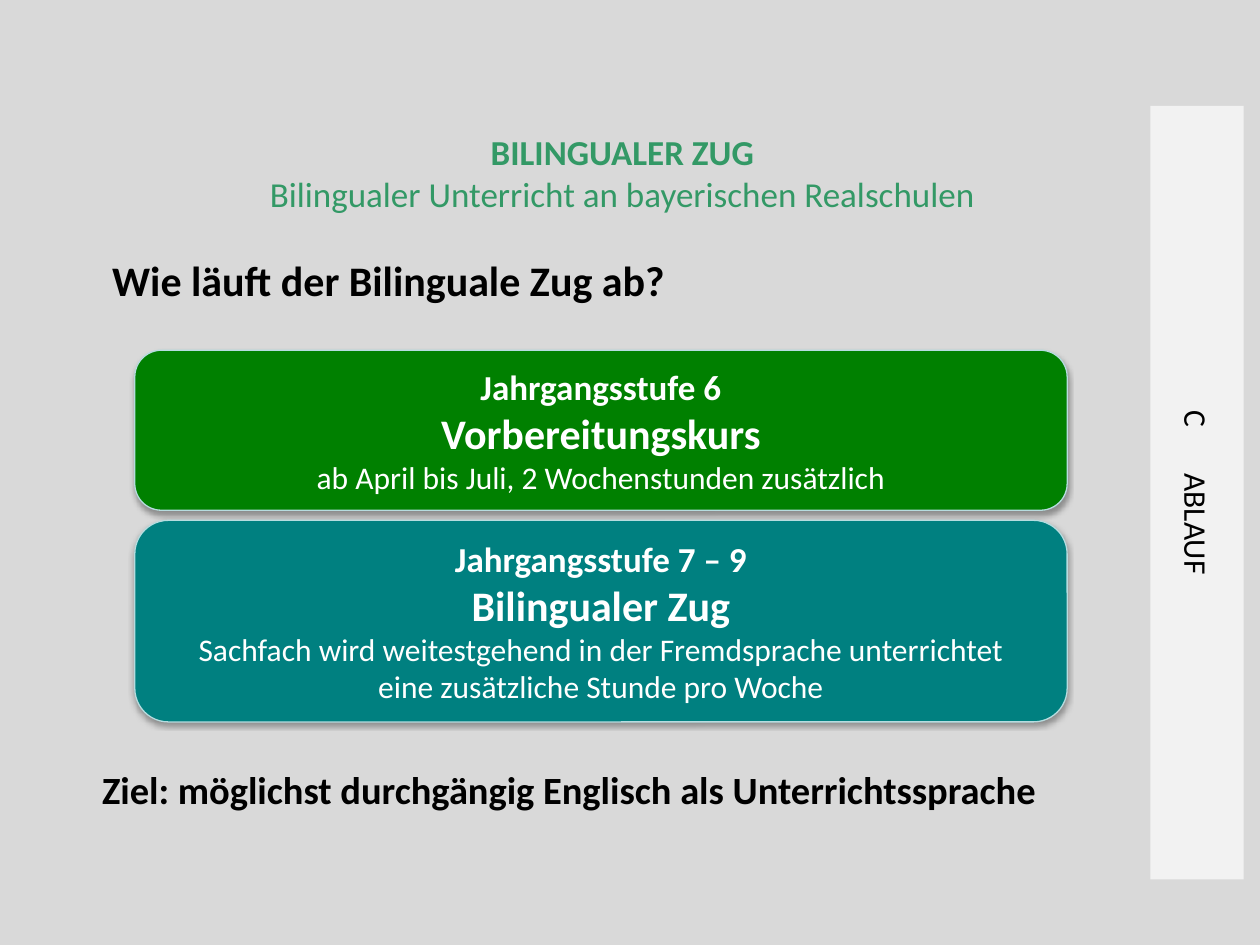
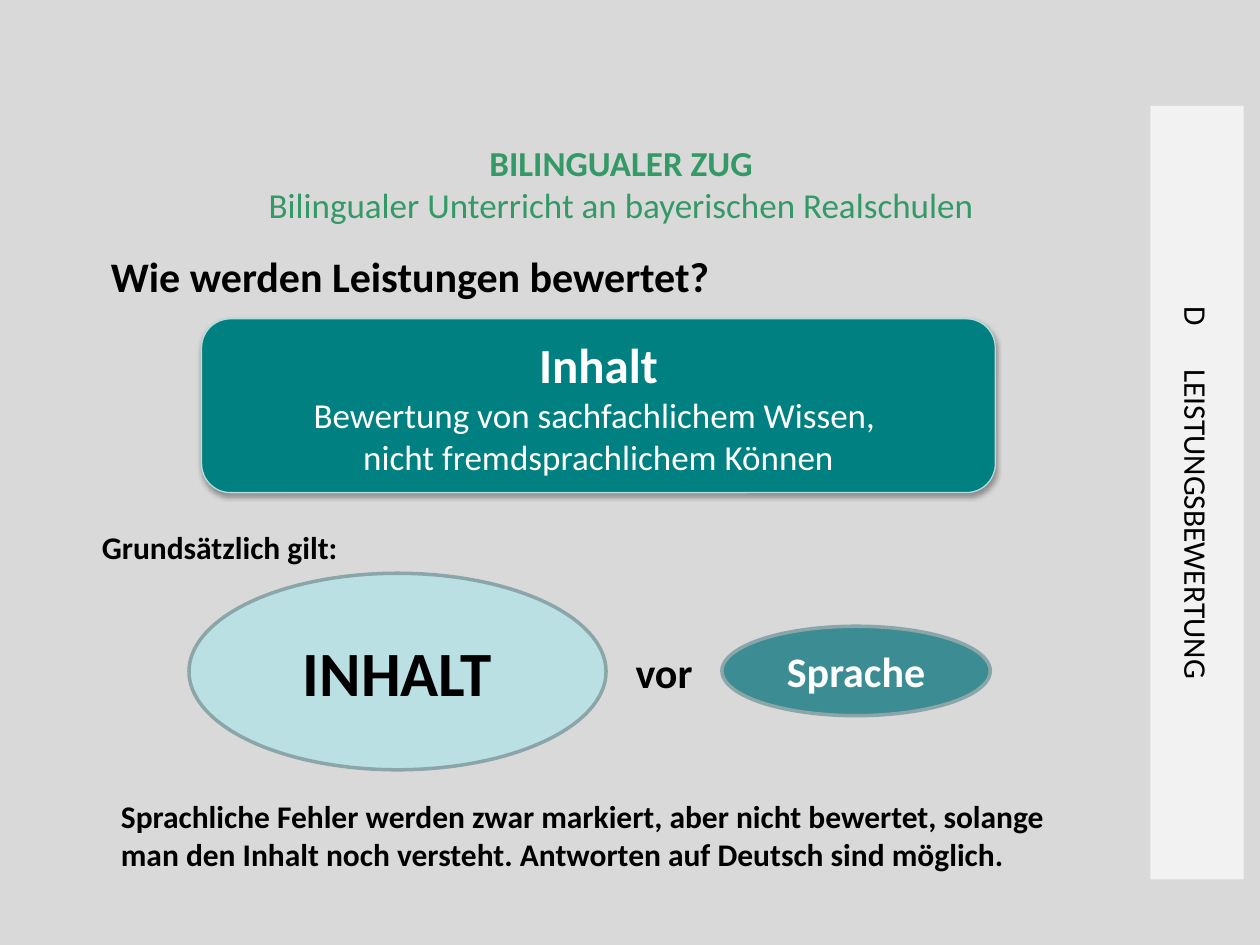
from dataclasses import dataclass

from lxml.etree import SubElement
from pptx import Presentation
from pptx.dml.color import RGBColor
from pptx.enum.shapes import MSO_SHAPE
from pptx.enum.text import MSO_ANCHOR, MSO_AUTO_SIZE, PP_ALIGN
from pptx.oxml.ns import qn
from pptx.util import Emu, Inches, Pt


@dataclass(frozen=True)
class Theme:
    font: str = "Calibri"
    background: str = "D9D9D9"
    tab: str = "F2F2F2"
    header: str = "339966"
    ink: str = "000000"
    light: str = "FFFFFF"
    green: str = "008000"
    teal: str = "008080"
    panel_edge: str = "B6DCDF"
    pale_oval: str = "BBE0E3"
    dark_oval: str = "3C8C93"
    oval_edge: str = "8AA6A8"
    body: int = 18
    lead: int = 20
    goal: int = 22
    title: int = 24
    panel_title: int = 28
    emphasis: int = 36


THEME = Theme()
COLUMNS, ROWS = 100, 75
WIDTH, HEIGHT = Inches(10), Inches(7.5)
TAB_AREA = (91.3, 8.4, 7.4, 61.4)
HEADER_SIZE = (72.8, 7.7)
TITLE_SIZE = (77.2, 5)


def rgb(code):
    return RGBColor.from_string(code)


def on_grid(left, top, width, height):
    """Turn columns and rows into slide lengths."""
    column, row = WIDTH / COLUMNS, HEIGHT / ROWS
    return [Emu(round(count * unit)) for count, unit in
            zip((left, top, width, height), (column, row, column, row))]


def write(frame, *paragraphs, size=THEME.body, color=THEME.ink, bold=False,
          align=PP_ALIGN.LEFT, anchor=MSO_ANCHOR.TOP):
    """Fill a frame; a paragraph is a text or a (text, size, bold) tuple."""
    frame.word_wrap = True
    frame.auto_size = MSO_AUTO_SIZE.NONE
    frame.vertical_anchor = anchor
    frame.margin_left = frame.margin_right = Inches(0.05)
    frame.margin_top = frame.margin_bottom = Inches(0.05)
    for index, content in enumerate(paragraphs):
        text, text_size, text_bold = (
            (content, size, bold) if isinstance(content, str) else content)
        paragraph = frame.add_paragraph() if index else frame.paragraphs[0]
        paragraph.alignment = align
        for number, line in enumerate(text.split("\n")):
            if number:
                paragraph.add_line_break()
            run = paragraph.add_run()
            run.text = line
            run.font.name = THEME.font
            run.font.size = Pt(text_size)
            run.font.bold = text_bold
            run.font.color.rgb = rgb(color)


class Deck:
    def __init__(self, theme):
        self.theme = theme
        self.presentation = Presentation()
        self.presentation.slide_width = WIDTH
        self.presentation.slide_height = HEIGHT
        backdrop = self.presentation.slide_master.background.fill
        backdrop.solid()
        backdrop.fore_color.rgb = rgb(theme.background)
        self.slide = None

    def start_slide(self, question, title_at, header_at, letter, section):
        """Add a slide with its title, running header and section tab."""
        layout = self.presentation.slide_layouts.get_by_name("Title Only")
        self.slide = self.presentation.slides.add_slide(layout)
        title = self.slide.shapes.title
        title.left, title.top, title.width, title.height = on_grid(
            *title_at, *TITLE_SIZE)
        write(title.text_frame, question, size=self.theme.title, bold=True)
        self.label((*header_at, *HEADER_SIZE),
                   ("BILINGUALER ZUG", self.theme.lead, True),
                   "Bilingualer Unterricht an bayerischen Realschulen",
                   size=self.theme.lead, color=self.theme.header,
                   bold=False, align=PP_ALIGN.CENTER)
        self.section_tab(f"{letter}\t{section}")

    def label(self, area, *paragraphs, **text_format):
        box = self.slide.shapes.add_textbox(*on_grid(*area))
        write(box.text_frame, *paragraphs, **{"bold": True, **text_format})

    def block(self, preset, area, fill, *paragraphs, edge=None,
              edge_width=0.75, **text_format):
        """Add a filled preset shape with centred text."""
        shape = self.slide.shapes.add_shape(preset, *on_grid(*area))
        shape.fill.solid()
        shape.fill.fore_color.rgb = rgb(fill)
        if edge:
            shape.line.color.rgb = rgb(edge)
            shape.line.width = Pt(edge_width)
        else:
            shape.line.fill.background()
        shape.shadow.inherit = False
        write(shape.text_frame, *paragraphs, align=PP_ALIGN.CENTER,
              anchor=MSO_ANCHOR.MIDDLE, **text_format)
        return shape

    def section_tab(self, text):
        tab = self.block(MSO_SHAPE.RECTANGLE, TAB_AREA, self.theme.tab, text)
        tab.text_frame._txBody.bodyPr.set("vert", "vert")

    def panel(self, area, fill, *paragraphs, **text_format):
        """Add a rounded panel with a soft shadow below it."""
        panel = self.block(MSO_SHAPE.ROUNDED_RECTANGLE, area, fill,
                           *paragraphs, edge=self.theme.panel_edge,
                           color=self.theme.light, **text_format)
        effects = panel._element.spPr.find(qn("a:effectLst"))
        shadow = SubElement(effects, qn("a:outerShdw"), blurRad=str(Pt(3)),
                            dist=str(Pt(1.8)), dir="5400000",
                            rotWithShape="0")
        tint = SubElement(shadow, qn("a:srgbClr"), val=self.theme.ink)
        SubElement(tint, qn("a:alpha"), val="35000")

    def oval(self, area, fill, text, **text_format):
        self.block(MSO_SHAPE.OVAL, area, fill, text, bold=True,
                   edge=self.theme.oval_edge, edge_width=2, **text_format)

    def save(self):
        self.presentation.save("out.pptx")


def add_procedure(deck):
    theme = deck.theme
    deck.start_slide("Wie läuft der Bilinguale Zug ab?", (8.4, 19.7),
                     (13, 9.9), "C", "ABLAUF")
    stages = [
        (27.8, 12.7, theme.green, "Jahrgangsstufe 6", "Vorbereitungskurs",
         ["ab April bis Juli, 2 Wochenstunden zusätzlich"]),
        (41.3, 16, theme.teal, "Jahrgangsstufe 7 – 9", "Bilingualer Zug",
         ["Sachfach wird weitestgehend in der Fremdsprache unterrichtet",
          "eine zusätzliche Stunde pro Woche"]),
    ]
    for top, height, fill, grade, course, details in stages:
        deck.panel((10.7, top, 74, height), fill,
                   (grade, theme.lead, True), (course, theme.title, True),
                   *details)
    deck.label((7.6, 60.3, 81.9, 4.7),
               "Ziel: möglichst durchgängig Englisch als Unterrichtssprache",
               size=theme.goal)


def add_assessment(deck):
    theme = deck.theme
    deck.start_slide("Wie werden Leistungen bewertet?", (8.3, 19.4),
                     (12.9, 10.7), "D", "LEISTUNGSBEWERTUNG")
    deck.panel((16, 25.3, 63, 13.8), theme.teal,
               ("Inhalt", theme.panel_title, True),
               "Bewertung von sachfachlichem Wissen, \n"
               "nicht fremdsprachlichem Können", size=theme.lead)
    deck.label((5.1, 41.4, 24.7, 4), "Grundsätzlich gilt:",
               align=PP_ALIGN.CENTER)
    deck.oval((15, 45.5, 33.1, 15.6), theme.pale_oval, "INHALT",
              size=theme.emphasis)
    deck.label((48.7, 50.8, 8, 5), "vor", size=theme.title,
               align=PP_ALIGN.CENTER)
    deck.oval((57.3, 49.7, 21.3, 7.1), theme.dark_oval, "Sprache",
              size=theme.title, color=theme.light)
    deck.label((9.1, 62.8, 74.7, 7.1),
               "Sprachliche Fehler werden zwar markiert, aber nicht bewertet, "
               "solange man den Inhalt noch versteht. Antworten auf Deutsch "
               "sind möglich.")


def main():
    deck = Deck(THEME)
    add_procedure(deck)
    add_assessment(deck)
    deck.save()


if __name__ == "__main__":
    main()
